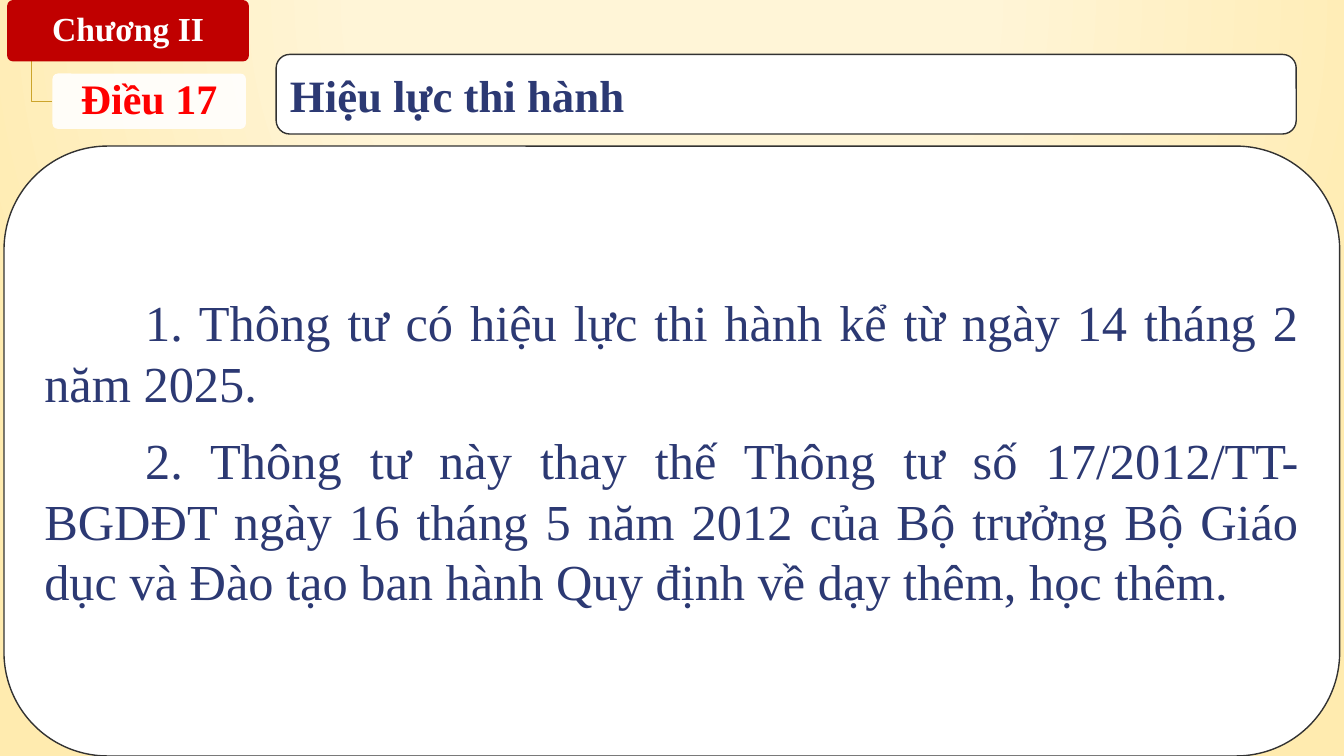
"""Build the slide on the effective date of the circular, Article 17."""
from dataclasses import dataclass

from lxml import etree
from pptx import Presentation
from pptx.dml.color import RGBColor
from pptx.enum.shapes import MSO_SHAPE
from pptx.enum.text import MSO_ANCHOR, PP_ALIGN
from pptx.oxml.ns import qn
from pptx.util import Inches, Pt

ROUNDED = MSO_SHAPE.ROUNDED_RECTANGLE
MIDDLE = MSO_ANCHOR.MIDDLE
LEFT, CENTER, JUSTIFY = PP_ALIGN.LEFT, PP_ALIGN.CENTER, PP_ALIGN.JUSTIFY

WIDTH, HEIGHT = Inches(13.333), Inches(7.5)
FONT = "Times New Roman"
WHITE, RED, CRIMSON = "FFFFFF", "FF0000", "C00000"
NAVY, OUTLINE, GOLD = "2C3973", "323232", "CCA42B"
BACKGROUND_STOPS = ((0, "FFF5D7", 59), (40, "FFF5D7", 66), (100, "FFEBAF", 100))
GLOW_CENTER = {"l": 50, "t": -80, "r": 50, "b": 180}


@dataclass(frozen=True)
class Panel:
    """A rounded box with text; lengths are percent of the slide's size."""
    left: float
    top: float
    width: float
    height: float
    lines: tuple[str, ...]
    size: int
    color: str = NAVY
    bold: bool = True
    align: int = LEFT
    fill: str = WHITE
    opacity: int = 100
    outline: str = ""
    corner: float = 0.17
    inset: float = 0.1
    spacing: float = 1.0
    gap: int = 0
    indent: float = 0


CHAPTER = Panel(0.53, 0, 18, 8.13, ("Chương II",), 24, color=WHITE, align=CENTER,
                fill=CRIMSON, corner=0.1, inset=0.05, spacing=0.9)
ARTICLE = Panel(3.9, 9.73, 14.4, 7.33, ("Điều 17",), 30, color=RED, align=CENTER,
                opacity=90, corner=0.1, inset=0.06, spacing=0.9)
BODY = Panel(0.3, 19.33, 99.38, 80.67, (
    "1. Thông tư có hiệu lực thi hành kể từ ngày 14 tháng 2 năm 2025.",
    "2. Thông tư này thay thế Thông tư số 17/2012/TT-BGDĐT ngày 16 tháng 5 năm 2012 "
    "của Bộ trưởng Bộ Giáo dục và Đào tạo ban hành Quy định về dạy thêm, học thêm.",
), 36, bold=False, align=JUSTIFY, outline=OUTLINE, gap=6, indent=1)
TITLE = Panel(20.55, 7.2, 75.9, 10.53, ("Hiệu lực thi hành",), 32, outline=OUTLINE)


def across(percent: float) -> int:
    """Turn a percent of the slide's width into a length."""
    return round(WIDTH * percent / 100)


def down(percent: float) -> int:
    """Turn a percent of the slide's height into a length."""
    return round(HEIGHT * percent / 100)


def paint(target, color: str) -> None:
    """Give a fill or font colour format a hex colour."""
    target.rgb = RGBColor.from_string(color)


def set_values(target, values: dict) -> None:
    """Set each attribute of the target from a dict."""
    for name, value in values.items():
        setattr(target, name, value)


def add_alpha(color_element, opacity: int) -> None:
    """Make a colour element partly transparent."""
    etree.SubElement(color_element, qn("a:alpha"), val=str(opacity * 1000))


def paint_background(page) -> None:
    """Fill the page with a round glow centred above it."""
    page.background.fill.gradient()
    gradient = page.element.find(".//" + qn("a:gradFill"))
    for child in list(gradient):
        gradient.remove(child)
    stops = etree.SubElement(gradient, qn("a:gsLst"))
    for position, color, opacity in BACKGROUND_STOPS:
        stop = etree.SubElement(stops, qn("a:gs"), pos=str(position * 1000))
        add_alpha(etree.SubElement(stop, qn("a:srgbClr"), val=color), opacity)
    circle = etree.SubElement(gradient, qn("a:path"), path="circle")
    etree.SubElement(circle, qn("a:fillToRect"),
                     {side: str(share * 1000) for side, share in GLOW_CENTER.items()})


def add_panel(page, panel: Panel) -> None:
    """Draw one rounded box with its paragraphs."""
    box = page.shapes.add_shape(ROUNDED, across(panel.left), down(panel.top),
                                across(panel.width), down(panel.height))
    box.shadow.inherit = False
    box.adjustments[0] = panel.corner
    box.fill.solid()
    paint(box.fill.fore_color, panel.fill)
    if panel.opacity < 100:
        add_alpha(box.element.spPr.find(".//" + qn("a:srgbClr")), panel.opacity)
    if panel.outline:
        paint(box.line.color, panel.outline)
        box.line.width = Pt(1)
    else:
        box.line.fill.background()
    frame = box.text_frame
    set_values(frame, {"word_wrap": True, "vertical_anchor": MIDDLE,
                       "margin_left": Inches(panel.inset),
                       "margin_right": Inches(panel.inset),
                       "margin_top": Inches(panel.inset / 2),
                       "margin_bottom": Inches(panel.inset / 2)})
    for number, line in enumerate(panel.lines):
        para = frame.add_paragraph() if number else frame.paragraphs[0]
        set_values(para, {"alignment": panel.align, "line_spacing": panel.spacing,
                          "space_before": Pt(panel.gap), "space_after": Pt(panel.gap)})
        if panel.indent:
            para._p.get_or_add_pPr().set("indent", str(Inches(panel.indent)))
        span = para.add_run()
        span.text = line
        set_values(span.font, {"name": FONT, "size": Pt(panel.size), "bold": panel.bold})
        paint(span.font.color, panel.color)


def add_branch(page, parent: Panel, child: Panel) -> None:
    """Draw the elbow line from the parent box to the child box."""
    stem = across(parent.left + parent.width / 10)
    middle = down(child.top + child.height / 2)
    builder = page.shapes.build_freeform(stem, down(parent.top + parent.height))
    builder.add_line_segments([(stem, middle), (across(child.left), middle)], close=False)
    branch = builder.convert_to_shape()
    branch.shadow.inherit = False
    branch.fill.background()
    paint(branch.line.color, GOLD)
    branch.line.width = Pt(1)


def main() -> None:
    """Build and save the deck."""
    deck = Presentation()
    set_values(deck, {"slide_width": WIDTH, "slide_height": HEIGHT})
    page = deck.slides.add_slide(deck.slide_layouts[6])
    paint_background(page)
    add_branch(page, CHAPTER, ARTICLE)
    for panel in (CHAPTER, ARTICLE, BODY, TITLE):
        add_panel(page, panel)
    deck.save("out.pptx")


if __name__ == "__main__":
    main()
